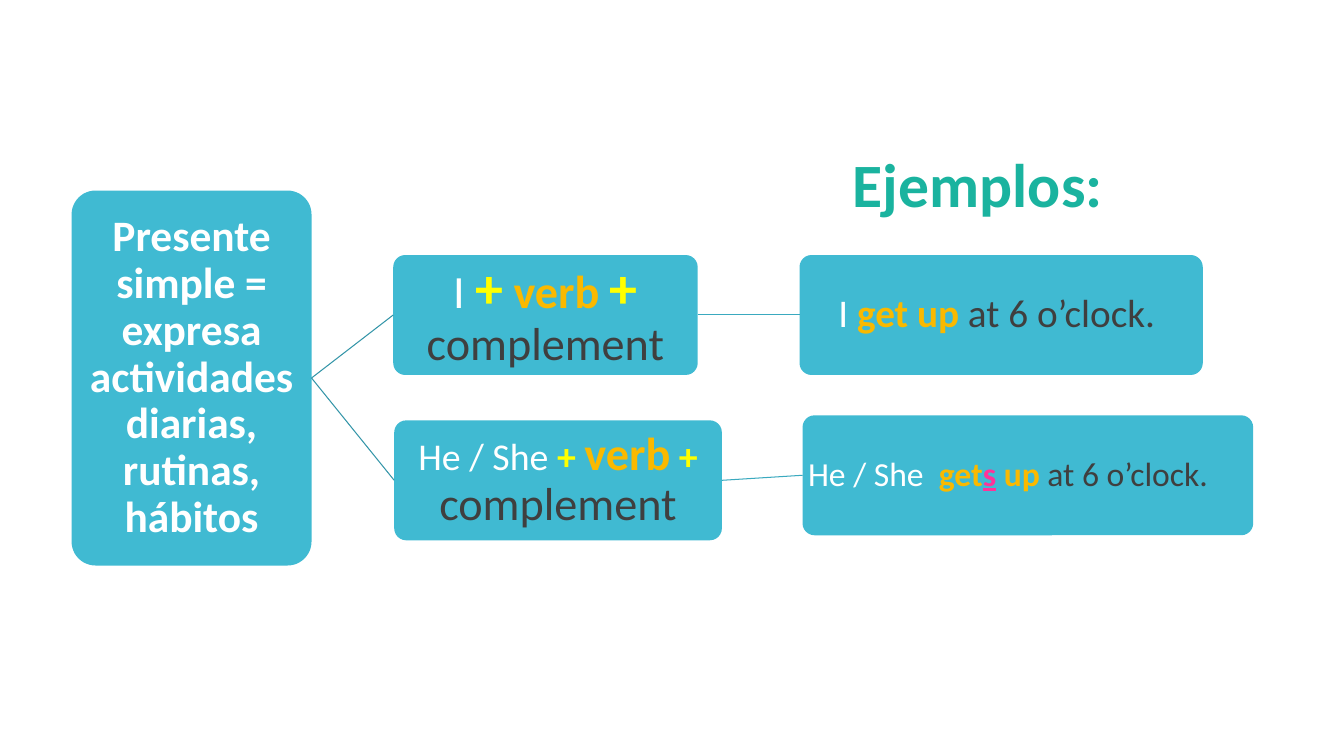
from pptx import Presentation
from pptx.dml.color import RGBColor
from pptx.enum.shapes import MSO_CONNECTOR, MSO_SHAPE
from pptx.enum.text import MSO_ANCHOR, MSO_AUTO_SIZE, PP_ALIGN
from pptx.oxml.ns import qn
from pptx.util import Inches, Pt
from lxml import etree

ROUNDED = MSO_SHAPE.ROUNDED_RECTANGLE
STRAIGHT = MSO_CONNECTOR.STRAIGHT
MIDDLE = MSO_ANCHOR.MIDDLE
FIT_SHAPE = MSO_AUTO_SIZE.SHAPE_TO_FIT_TEXT
LEFT, CENTER = PP_ALIGN.LEFT, PP_ALIGN.CENTER

FONT = "Calibri"
BOX_BLUE = RGBColor(0x40, 0xBA, 0xD2)
FIRST_LINE = RGBColor(0x33, 0x95, 0xA8)
SECOND_LINE = RGBColor(0x3A, 0xA9, 0xBF)
WHITE = RGBColor(0xFF, 0xFF, 0xFF)
YELLOW = RGBColor(0xFF, 0xFF, 0x00)
ORANGE = RGBColor(0xFA, 0xB9, 0x00)
GRAY = RGBColor(0x3F, 0x3F, 0x3F)
PINK = RGBColor(0xFF, 0x33, 0x99)
TEAL = RGBColor(0x1A, 0xB3, 0x9F)

RIGHT_SITE, LEFT_SITE = 3, 1
BRANCH_HEIGHT = 1.19


def add_spans(para, spans):
    """Each span is (text, size, colour, bold) with an optional underline."""
    for text, size, color, bold, *underline in spans:
        span = para.add_run()
        span.text = text
        span.font.color.rgb = color
        formats = {"name": FONT, "size": Pt(size), "bold": bold,
                   "underline": bool(underline)}
        for name, value in formats.items():
            setattr(span.font, name, value)


def add_box(page, left, top, width, height, spans, align=CENTER):
    box = page.shapes.add_shape(ROUNDED, Inches(left), Inches(top),
                                Inches(width), Inches(height))
    box.adjustments[0] = 0.1
    box.shadow.inherit = False
    box.fill.solid()
    box.fill.fore_color.rgb = BOX_BLUE
    box.line.fill.background()

    frame = box.text_frame
    margin = Inches(0.02)
    formats = {"word_wrap": True, "vertical_anchor": MIDDLE,
               "margin_left": margin, "margin_right": margin,
               "margin_top": margin, "margin_bottom": margin}
    for name, value in formats.items():
        setattr(frame, name, value)
    para = frame.paragraphs[0]
    para.alignment = align
    para.line_spacing = 0.9
    add_spans(para, spans)
    return box


def join_boxes(page, start, end, color):
    line = page.shapes.add_connector(STRAIGHT, 0, 0, 0, 0)
    line.begin_connect(start, RIGHT_SITE)
    line.end_connect(end, LEFT_SITE)
    line.line.color.rgb = color
    line.line.width = Pt(0.75)
    etree.SubElement(line._element.spPr, qn("a:effectLst"))


def add_heading(page, left, top, width, height, spans):
    box = page.shapes.add_textbox(Inches(left), Inches(top),
                                  Inches(width), Inches(height))
    box.text_frame.word_wrap = False
    box.text_frame.auto_size = FIT_SHAPE
    para = box.text_frame.paragraphs[0]
    para.alignment = CENTER
    add_spans(para, spans)


def main():
    deck = Presentation()
    deck.slide_width, deck.slide_height = Inches(13.33), Inches(7.5)
    page = deck.slides.add_slide(deck.slide_layouts[6])

    # Root of the tree
    root = add_box(page, 0.71, 1.89, 2.38, 3.72, [
        ("Presente simple = expresa actividades diarias, rutinas, hábitos",
         31, WHITE, True)])

    # Sentence patterns
    first_pattern = add_box(page, 3.9, 2.53, 3.02, BRANCH_HEIGHT, [
        ("I ", 33, WHITE, False), ("+", 40, YELLOW, True),
        (" ", 33, WHITE, False), ("verb ", 33, ORANGE, True),
        ("+", 40, YELLOW, True), (" ", 33, WHITE, False),
        ("complement", 33, GRAY, False)])
    third_pattern = add_box(page, 3.91, 4.17, 3.25, BRANCH_HEIGHT, [
        ("He / She ", 27, WHITE, False), ("+ ", 27, YELLOW, True),
        ("verb", 33, ORANGE, True), (" ", 27, WHITE, False),
        ("+ ", 27, YELLOW, True), ("complement", 33, GRAY, False)])

    # Examples
    first_example = add_box(page, 7.93, 2.53, 4, BRANCH_HEIGHT, [
        ("I ", 28, WHITE, False), ("get up ", 28, ORANGE, True),
        ("at 6 o’clock. ", 28, GRAY, False)])
    third_example = add_box(page, 7.96, 4.12, 4.47, BRANCH_HEIGHT, [
        ("He / She  ", 24, WHITE, False), ("get", 24, ORANGE, True),
        ("s", 24, PINK, True, "underline"), (" up ", 24, ORANGE, True),
        ("at 6 o’clock.", 24, GRAY, False)], LEFT)

    # Branch lines
    for pattern, example in ((first_pattern, first_example),
                             (third_pattern, third_example)):
        join_boxes(page, root, pattern, FIRST_LINE)
        join_boxes(page, pattern, example, SECOND_LINE)

    # Heading over the examples
    add_heading(page, 8.28, 1.4, 2.84, 0.84, [("Ejemplos:", 44, TEAL, True)])

    deck.save("out.pptx")


if __name__ == "__main__":
    main()
